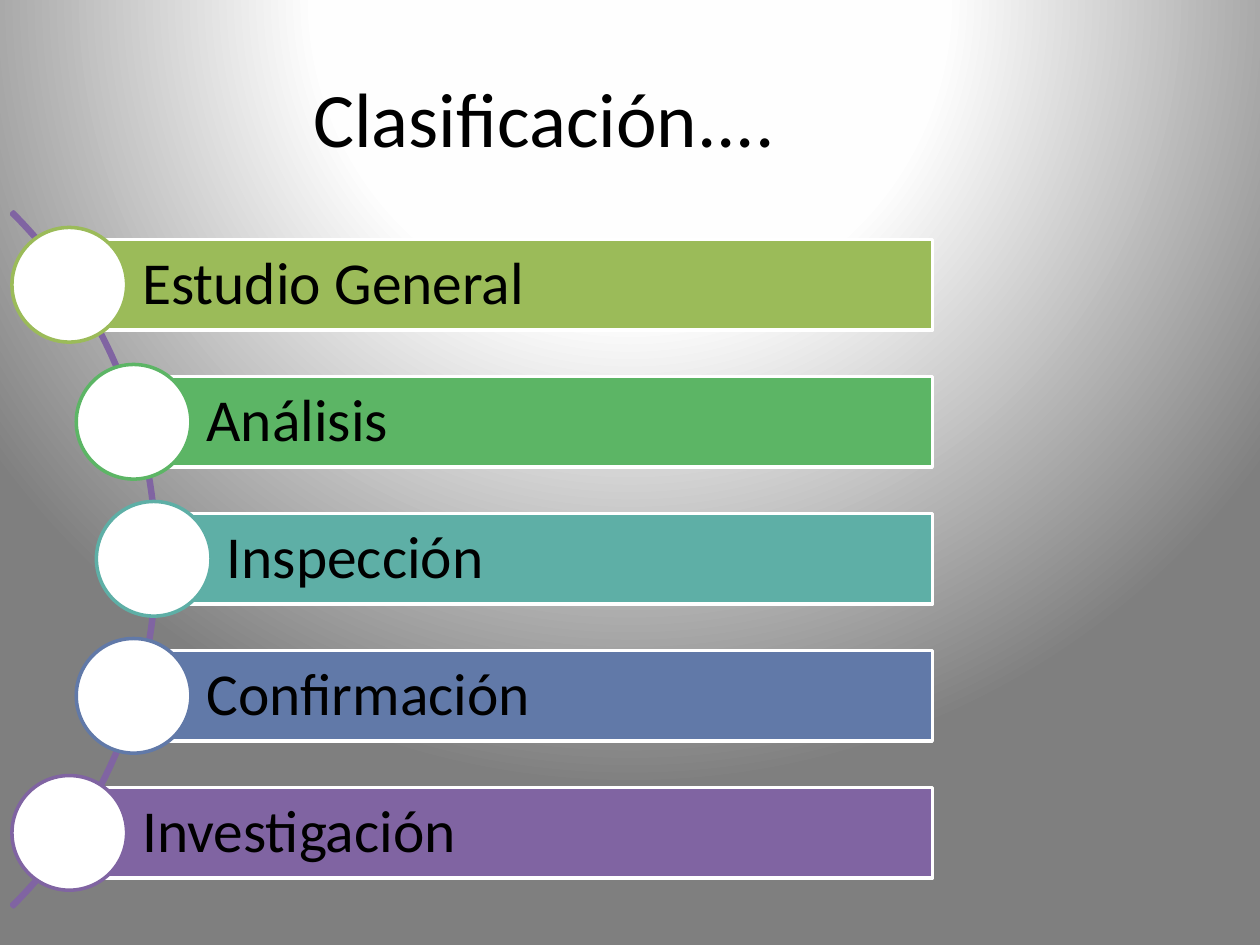
from lxml import etree
from pptx import Presentation
from pptx import util as u
from pptx.dml.color import RGBColor
from pptx.enum import shapes, text
from pptx.oxml import ns, parse_xml


def rgb(value):
    return RGBColor.from_string(value)


def add_shape(kind, x, y, w, h, line, fill=None):
    sp = s.shapes.add_shape(kind, u.Inches(x), u.Inches(y), u.Inches(w), u.Inches(h))
    sp.shadow.inherit = False
    if fill:
        sp.fill.solid()
        sp.fill.fore_color.rgb = rgb(fill)
    else:
        sp.fill.background()
    sp.line.color.rgb = rgb(line)
    sp.line.width = u.Pt(2)
    return sp


prs = Presentation()
prs.slide_width, prs.slide_height = u.Inches(10), u.Inches(7.5)
s = prs.slides.add_slide(prs.slide_layouts[6])

s.background.fill.gradient()
grad = s.element.find(".//" + ns.qn("a:gradFill"))
stops = [(0, "FFFFFF"), (40, "FEFEFE"), (100, "7F7F7F")]
gs = "".join(
    f'<a:gs pos="{pos * 1000}"><a:srgbClr val="{color}"/></a:gs>' for pos, color in stops
)
grad.getparent().replace(grad, parse_xml(
    f'<a:gradFill {ns.nsdecls("a")} rotWithShape="1"><a:gsLst>{gs}</a:gsLst>'
    '<a:path path="circle"><a:fillToRect l="50000" t="-80000" r="50000" b="180000"/>'
    '</a:path></a:gradFill>'
))

title = s.shapes.add_textbox(u.Inches(0.53), u.Inches(0.5), u.Inches(7.72), u.Inches(0.86))
tf = title.text_frame
tf.word_wrap = True
tf.vertical_anchor = text.MSO_ANCHOR.MIDDLE
p = tf.paragraphs[0]
p.text = "Clasificación.... "
p.alignment = text.PP_ALIGN.CENTER
p.font.name, p.font.size = "Calibri", u.Pt(44)
p.font.color.rgb = rgb("000000")

arc = add_shape(shapes.MSO_SHAPE.BLOCK_ARC, -6.55, 0.54, 7.8, 7.8, "8064A2")
for i, value in enumerate([189, 27, 0.003]):
    arc.adjustments[i] = value

right, first, pitch = 7.4, 2.26, 1.0875
bar_h, dot = 0.72, 0.91
rows = [
    ("Estudio General", 0.55, "9BBB59"),
    ("Análisis", 1.06, "5CB565"),
    ("Inspección", 1.22, "5EAFA6"),
    ("Confirmación", 1.06, "6179A8"),
    ("Investigación", 0.55, "8064A2"),
]
for i, (label, left, color) in enumerate(rows):
    mid = first + i * pitch
    bar = add_shape(shapes.MSO_SHAPE.RECTANGLE, left, mid - bar_h / 2,
                    right - left, bar_h, "FFFFFF", color)
    tf = bar.text_frame
    tf.word_wrap = True
    tf.vertical_anchor = text.MSO_ANCHOR.MIDDLE
    tf.margin_left = u.Inches(0.58)
    tf.margin_top = tf.margin_right = tf.margin_bottom = u.Inches(0.09)
    p = tf.paragraphs[0]
    p.text = label
    p.alignment = text.PP_ALIGN.LEFT
    p.line_spacing = 0.9
    p.font.name, p.font.size = "Calibri", u.Pt(34)
    p.font.color.rgb = rgb("000000")
    add_shape(shapes.MSO_SHAPE.OVAL, left - dot / 2, mid - dot / 2, dot, dot, color, "FFFFFF")

prs.save("out.pptx")
